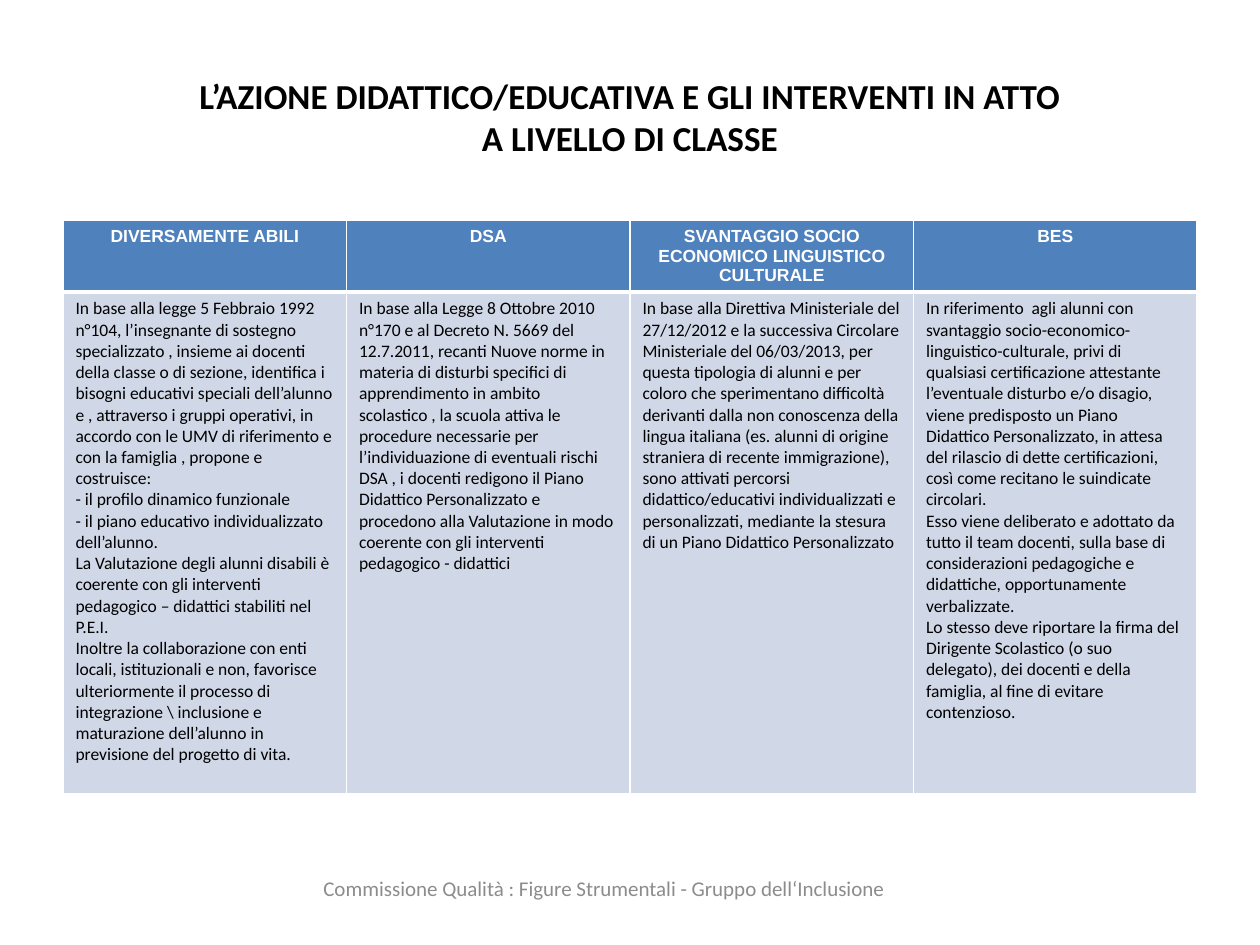
"""Build the slide on class-level teaching actions and support measures."""
from dataclasses import dataclass

from lxml import etree
from pptx import Presentation
from pptx.dml.color import RGBColor
from pptx.enum.text import MSO_ANCHOR, PP_ALIGN
from pptx.oxml.ns import qn
from pptx.util import Cm, Pt

CENTER, LEFT = PP_ALIGN.CENTER, PP_ALIGN.LEFT
TOP, MIDDLE = MSO_ANCHOR.TOP, MSO_ANCHOR.MIDDLE


@dataclass(frozen=True)
class Theme:
    ink: str = "000000"
    white: str = "FFFFFF"
    header: str = "4F81BD"
    body: str = "D0D8E8"
    muted: str = "8C8C8C"
    heading_face: str = "Arial"
    text_face: str = "Calibri"
    title_size: int = 20
    table_size: int = 10
    footer_size: int = 12


THEME = Theme()

ACTIONS = {
    "DIVERSAMENTE ABILI": [
        "In base alla legge 5 Febbraio 1992 n°104, l’insegnante di sostegno "
        "specializzato , insieme ai docenti della classe o di sezione, identifica i "
        "bisogni educativi speciali dell’alunno e , attraverso i gruppi operativi, in "
        "accordo con le UMV di riferimento e con la famiglia , propone e costruisce:",
        "- il profilo dinamico funzionale",
        "- il piano educativo individualizzato dell’alunno.",
        "La Valutazione degli alunni disabili è coerente con gli interventi "
        "pedagogico – didattici stabiliti nel P.E.I.",
        "Inoltre la collaborazione con enti locali, istituzionali e non, favorisce "
        r"ulteriormente il processo di integrazione \ inclusione e maturazione "
        "dell’alunno in previsione del progetto di vita.",
    ],
    "DSA": [
        "In base alla Legge 8 Ottobre 2010 n°170 e al Decreto N. 5669 del 12.7.2011, "
        "recanti Nuove norme in materia di disturbi specifici di apprendimento in "
        "ambito scolastico , la scuola attiva le procedure necessarie per "
        "l’individuazione di eventuali rischi DSA , i docenti redigono il Piano "
        "Didattico Personalizzato e procedono alla Valutazione in modo coerente con "
        "gli interventi pedagogico - didattici",
    ],
    "SVANTAGGIO SOCIO ECONOMICO LINGUISTICO CULTURALE": [
        "In base alla Direttiva Ministeriale del 27/12/2012 e la successiva Circolare "
        "Ministeriale del 06/03/2013, per questa tipologia di alunni e per coloro che "
        "sperimentano difficoltà derivanti dalla non conoscenza della lingua italiana "
        "(es. alunni di origine straniera di recente immigrazione), sono attivati "
        "percorsi didattico/educativi individualizzati e personalizzati, mediante la "
        "stesura di un Piano Didattico Personalizzato",
    ],
    "BES": [
        "In riferimento  agli alunni con svantaggio socio-economico-linguistico-"
        "culturale, privi di qualsiasi certificazione attestante l’eventuale disturbo "
        "e/o disagio, viene predisposto un Piano Didattico Personalizzato, in attesa "
        "del rilascio di dette certificazioni, così come recitano le suindicate "
        "circolari.",
        "Esso viene deliberato e adottato da tutto il team docenti, sulla base di "
        "considerazioni pedagogiche e didattiche, opportunamente verbalizzate.",
        "Lo stesso deve riportare la firma del Dirigente Scolastico (o suo delegato), "
        "dei docenti e della famiglia, al fine di evitare contenzioso.",
    ],
}


def write(frame, lines, face, size, color, bold=False, align=CENTER):
    frame.text = "\n".join(lines)
    for paragraph in frame.paragraphs:
        paragraph.alignment = align
        font = paragraph.font
        font.name, font.size, font.bold = face, Pt(size), bold
        font.color.rgb = RGBColor.from_string(color)


def paint(cell, fill, top, bottom):
    cell.fill.solid()
    cell.fill.fore_color.rgb = RGBColor.from_string(fill)
    properties = cell._tc.get_or_add_tcPr()
    edges = {"lnL": 1, "lnR": 1, "lnT": top, "lnB": bottom}
    for position, (edge, width) in enumerate(edges.items()):
        line = etree.Element(qn(f"a:{edge}"), w=str(Pt(width)))
        solid = etree.SubElement(line, qn("a:solidFill"))
        etree.SubElement(solid, qn("a:srgbClr"), val=THEME.white)
        properties.insert(position, line)


deck = Presentation()
deck.slide_width, deck.slide_height = Cm(25.4), Cm(19.05)
slide = deck.slides.add_slide(deck.slide_layouts[5])

title = slide.shapes.title
title.left, title.top, title.width, title.height = Cm(1.27), Cm(0.76), Cm(22.86), Cm(3.18)
title.text_frame.vertical_anchor = MIDDLE
write(title.text_frame, ["L’AZIONE DIDATTICO/EDUCATIVA E GLI INTERVENTI IN ATTO"],
      THEME.text_face, THEME.title_size, THEME.ink, bold=True)
heading = title.text_frame.paragraphs[0]
heading.add_line_break()
heading.add_run().text = "A LIVELLO DI CLASSE"

actions = slide.shapes.add_table(
    2, len(ACTIONS), Cm(1.27), Cm(4.45), Cm(22.86), Cm(11.51)).table
actions.horz_banding = False
actions.rows[0].height, actions.rows[1].height = Cm(1.4), Cm(10.11)
for column, (group, measures) in enumerate(ACTIONS.items()):
    group_cell, measures_cell = actions.cell(0, column), actions.cell(1, column)
    paint(group_cell, THEME.header, top=1, bottom=3)
    write(group_cell.text_frame, [group], THEME.heading_face, THEME.table_size,
          THEME.white, bold=True)
    paint(measures_cell, THEME.body, top=3, bottom=1)
    write(measures_cell.text_frame, measures, THEME.text_face, THEME.table_size,
          THEME.ink, align=LEFT)

committee = slide.shapes.add_textbox(Cm(1.27), Cm(17.65), Cm(21.82), Cm(1.02)).text_frame
committee.word_wrap = True
committee.vertical_anchor = TOP
committee.margin_top = 0
write(committee, ["Commissione Qualità : Figure Strumentali - Gruppo dell‘Inclusione"],
      THEME.text_face, THEME.footer_size, THEME.muted)

deck.save("out.pptx")
